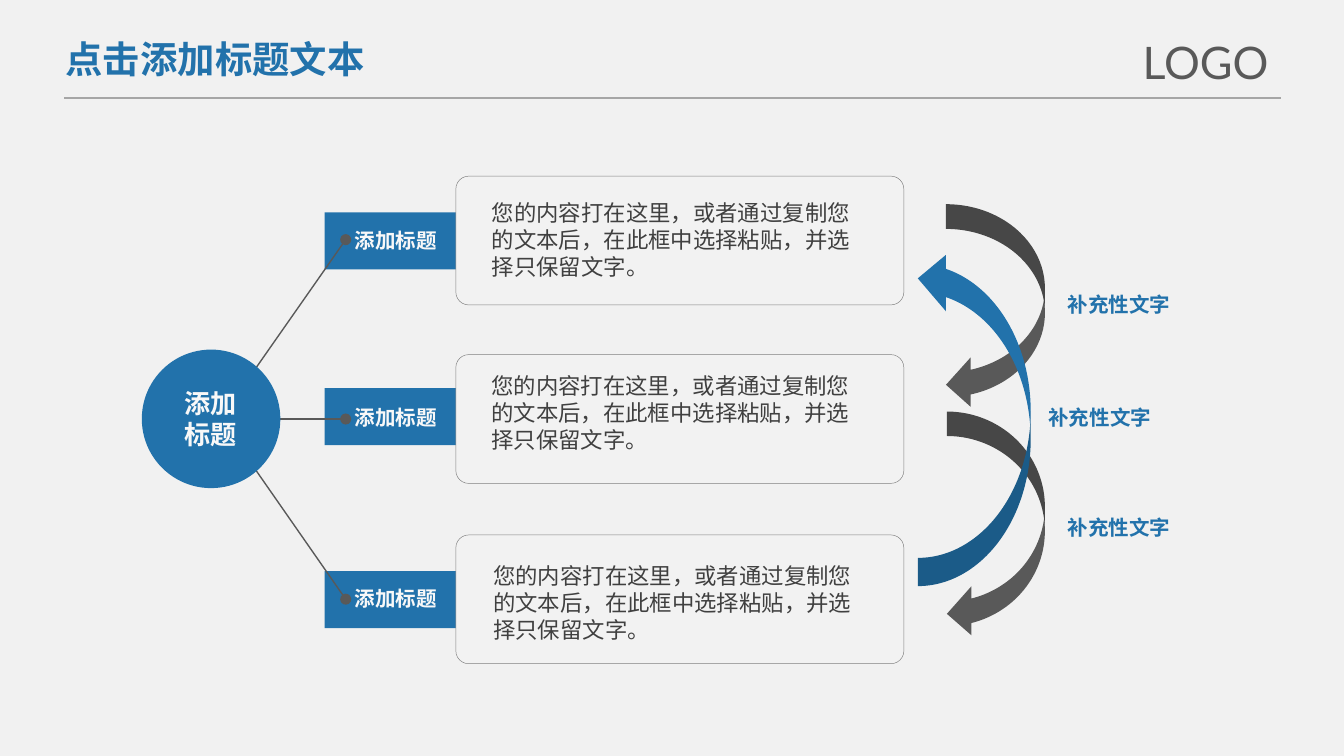
import lxml.etree
import pptx
import pptx.dml.color
import pptx.enum.shapes
import pptx.enum.text
import pptx.oxml.ns
import pptx.util

BLUE, GREY, WHITE, DARK = "2272AB", "595959", "F8F8F8", "404040"
LABEL = "添加标题"
CONTENT = "您的内容打在这里，或者通过复制您的文本后，在此框中选择粘贴，并选择只保留文字。"
SHAPES = pptx.enum.shapes.MSO_SHAPE
ANCHOR = pptx.enum.text.MSO_ANCHOR
CENTER = pptx.enum.text.PP_ALIGN.CENTER


def points(*values):
    """Convert numbers to lengths in points."""
    return [pptx.util.Pt(value) for value in values]


def color(value):
    """Return the colour for a hex string."""
    return pptx.dml.color.RGBColor.from_string(value)


def add_child(parent, tag, **attributes):
    """Append a DrawingML element to a parent element."""
    return lxml.etree.SubElement(parent, pptx.oxml.ns.qn(tag), attributes)


def write_text(shape, text, size, text_color, bold=False, font="Calibri",
               alignment=None, anchor=ANCHOR.MIDDLE, margins=(5, 2.5), wrap=True):
    """Fill a shape with text in one uniform format."""
    frame = shape.text_frame
    frame.text = text
    frame.word_wrap = wrap
    frame.vertical_anchor = anchor
    frame.margin_left = frame.margin_right = pptx.util.Pt(margins[0])
    frame.margin_top = frame.margin_bottom = pptx.util.Pt(margins[1])
    for paragraph in frame.paragraphs:
        paragraph.alignment = alignment
        for run in paragraph.runs:
            run.font.name = font
            run.font.size = pptx.util.Pt(size)
            run.font.bold = bold
            run.font.color.rgb = color(text_color)
            add_child(run.font._element, "a:ea", typeface=font)


def add_text(slide, bounds, text, size, text_color, **options):
    """Add a text box."""
    write_text(slide.shapes.add_textbox(*points(*bounds)), text, size, text_color, **options)


def add_shape(slide, kind, bounds, fill, line=None):
    """Add a filled preset shape, with a thin outline if a line colour is given."""
    shape = slide.shapes.add_shape(kind, *points(*bounds))
    shape.shadow.inherit = False
    shape.fill.solid()
    shape.fill.fore_color.rgb = color(fill)
    if line:
        shape.line.color.rgb = color(line)
        shape.line.width = pptx.util.Pt(0.25)
    else:
        shape.line.fill.background()
    return shape


def add_line(slide, ends, line_color, width, dots=False):
    """Add a straight line, with round dots on its ends if asked."""
    connector = slide.shapes.add_connector(
        pptx.enum.shapes.MSO_CONNECTOR.STRAIGHT, *points(*ends))
    connector.line.color.rgb = color(line_color)
    connector.line.width = pptx.util.Pt(width)
    if dots:
        for tag in ("a:headEnd", "a:tailEnd"):
            add_child(connector.line._get_or_add_ln(), tag, type="oval")
    add_child(connector._element.spPr, "a:effectLst")


def add_header(slide):
    """Add the title, the rule below it and the word on the right."""
    add_line(slide, (34.5, 52.5, 686, 52.5), "A6A6A6", 1)
    style = {"anchor": ANCHOR.TOP, "margins": (7.2, 3.6), "wrap": False}
    add_text(slide, (28, 16, 176.5, 31.5), "点击添加标题文本", 20, BLUE,
             bold=True, font="Noto Sans CJK SC", **style)
    add_text(slide, (605, 15, 90, 36), "LOGO", 24, GREY, font="Lato", **style)


def add_labels(slide):
    """Add the three labels and the hub joined to them."""
    for top, text_top in ((113.8, 119), (208, 213.8), (306, 311)):
        add_shape(slide, SHAPES.PENTAGON, (174, top, 99.5, 30.5), BLUE)
        add_text(slide, (185, text_top, 83, 19.5), LABEL, 11, WHITE, bold=True)
    for end in (128.4, 224.5, 321):
        add_line(slide, (118, 224.5, 185.2, end), GREY, 0.75, dots=True)
    hub = add_shape(slide, SHAPES.OVAL, (76, 187.3, 74.2, 74.2), BLUE)
    write_text(hub, "添加\n标题", 14, WHITE, bold=True, alignment=CENTER)


def add_arrows(slide):
    """Add the curved arrows and their captions."""
    arrow = SHAPES.CURVED_LEFT_ARROW
    add_shape(slide, arrow, (506.8, 109.4, 53, 110), GREY)
    add_shape(slide, arrow, (507.3, 220.5, 52.5, 121.5), GREY)
    back = add_shape(slide, arrow, (491.7, 134, 60.5, 180), BLUE)
    back.rotation = 180
    back._element.spPr.xfrm.set("flipH", "1")
    for left, top in ((566.7, 154), (556.5, 214.5), (566.7, 273.6)):
        add_text(slide, (left, top, 65.5, 18), "补充性文字", 11, BLUE, bold=True,
                 font="Arial", alignment=CENTER, anchor=ANCHOR.TOP)


def add_contents(slide):
    """Add the three rounded content boxes."""
    for top, left, text_top in ((94.4, 258.5, 109.6), (190, 258.2, 202.2), (286.6, 259.2, 304)):
        box = add_shape(slide, SHAPES.ROUNDED_RECTANGLE, (244.2, top, 240, 69), "F2F2F2", "808080")
        box.adjustments[0] = 0.1
        add_text(slide, (left, text_top, 209.5, 37.5), CONTENT, 12, DARK)


def main():
    """Build and save the presentation."""
    presentation = pptx.Presentation()
    presentation.slide_width, presentation.slide_height = points(720, 405)
    slide = presentation.slides.add_slide(presentation.slide_layouts[6])
    slide.background.fill.solid()
    slide.background.fill.fore_color.rgb = color("F1F1F1")
    add_header(slide)
    add_labels(slide)
    add_arrows(slide)
    add_contents(slide)
    presentation.save("out.pptx")


if __name__ == "__main__":
    main()
